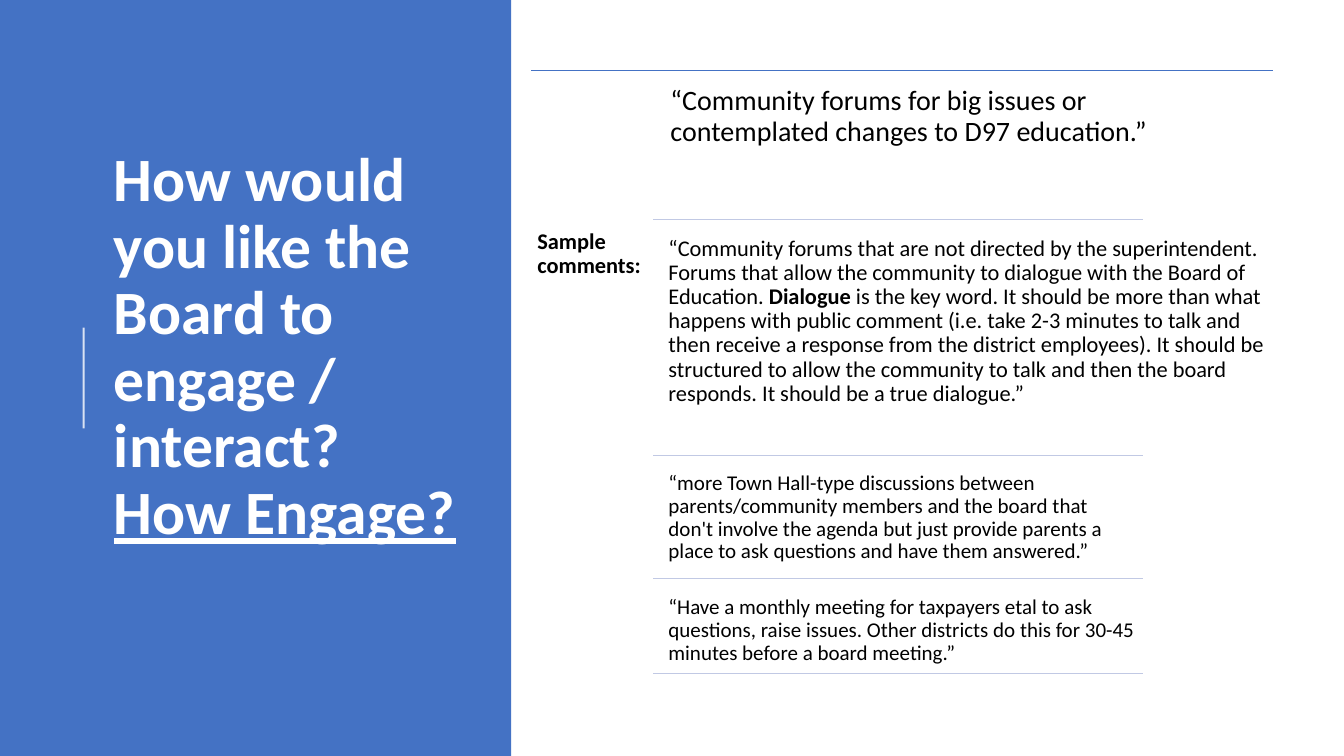
from dataclasses import dataclass

from lxml.etree import SubElement
from pptx import Presentation
from pptx.dml.color import RGBColor as Color
from pptx.enum.shapes import MSO_CONNECTOR as Connector, MSO_SHAPE as Preset
from pptx.enum.text import MSO_ANCHOR as Anchor, MSO_AUTO_SIZE as AutoSize, PP_ALIGN as Align
from pptx.oxml.ns import qn
from pptx.util import Emu, Pt

EMU_PER_PX = 9144  # 100 px to the inch
TITLE_ONLY = 5


@dataclass(frozen=True)
class Theme:
    font: str = "Calibri"
    accent: str = "4472C4"
    divider: str = "C1C9E4"
    white: str = "FFFFFF"
    text: str = "000000"
    title_size: int = 44
    lead_size: int = 20
    body_size: int = 16
    small_size: int = 15
    line_spacing: float = 0.9


def px(*lengths):
    return [Emu(length * EMU_PER_PX) for length in lengths]


def set_attributes(target, values):
    for name, value in values.items():
        setattr(target, name, value)


class SlideBuilder:
    def __init__(self, slide, theme):
        self.slide = slide
        self.theme = theme

    def panel(self, box, color):
        """Add a filled rectangle behind the title."""
        shape = self.slide.shapes.add_shape(Preset.RECTANGLE, *px(*box))
        shape.shadow.inherit = False
        shape.fill.solid()
        shape.fill.fore_color.rgb = Color.from_string(color)
        shape.line.fill.background()
        self.slide.shapes.title._element.addprevious(shape._element)

    def line(self, start, end, color, width=1, opacity=100):
        connector = self.slide.shapes.add_connector(Connector.STRAIGHT, *px(*start, *end))
        connector.line.width = Pt(width)
        connector.line.color.rgb = Color.from_string(color)
        properties = connector._element.spPr
        if opacity < 100:
            fill = next(properties.iter(qn("a:srgbClr")))
            SubElement(fill, qn("a:alpha")).set("val", str(opacity * 1000))
        SubElement(properties, qn("a:effectLst"))

    def title(self, box, lines, bottom_inset):
        """Fill the title placeholder with (text, format) lines."""
        shape = self.slide.shapes.title
        set_attributes(shape, dict(zip(("left", "top", "width", "height"), px(*box))))
        set_attributes(shape.text_frame, {
            "word_wrap": True,
            "auto_size": AutoSize.NONE,
            "vertical_anchor": Anchor.MIDDLE,
            "margin_bottom": px(bottom_inset)[0],
        })
        paragraph = self.paragraph(shape.text_frame)
        for index, (text, style) in enumerate(lines):
            if index:
                paragraph.add_line_break()
            self.run(paragraph, text, self.theme.title_size, self.theme.white, bold=True, **style)

    def text(self, box, runs, size, inset=6):
        """Add a text box holding one paragraph of (text, format) runs."""
        frame = self.slide.shapes.add_textbox(*px(*box)).text_frame
        margin = px(inset)[0]
        set_attributes(frame, {
            "word_wrap": True,
            "margin_left": margin,
            "margin_right": margin,
            "margin_top": margin,
            "margin_bottom": margin,
        })
        paragraph = self.paragraph(frame)
        for text, style in runs:
            self.run(paragraph, text, size, self.theme.text, **style)

    def paragraph(self, frame):
        paragraph = frame.paragraphs[0]
        set_attributes(paragraph, {
            "alignment": Align.LEFT,
            "line_spacing": self.theme.line_spacing,
        })
        return paragraph

    def run(self, paragraph, text, size, color, **style):
        run = paragraph.add_run()
        run.text = text
        set_attributes(run.font, {"name": self.theme.font, "size": Pt(size), **style})
        run.font.color.rgb = Color.from_string(color)


def main():
    theme = Theme()
    presentation = Presentation()
    presentation.slide_width, presentation.slide_height = px(1333, 750)
    slide = presentation.slides.add_slide(presentation.slide_layouts[TITLE_ONLY])
    builder = SlideBuilder(slide, theme)

    builder.panel((0, 0, 507, 750), theme.accent)
    builder.line((83, 425), (83, 325), theme.white, width=1.5, opacity=80)
    builder.title((103, 78, 369, 602), [
        ("How would you like the Board to engage / interact? ", {}),
        ("How Engage?", {"underline": True}),
    ], bottom_inset=72)

    builder.line((527, 70), (1263, 70), theme.accent)
    builder.text((527, 222, 122, 457), [("Sample comments:", {"bold": True})], theme.body_size)

    # Each comment: top, width, height, inset, type size, runs, divider below
    comments = [
        (78, 512, 136, 8, theme.lead_size, [
            ("“Community forums for big issues or contemplated changes to D97 education.”", {}),
        ], 218),
        (229, 605, 223, 6, theme.body_size, [
            ("“Community forums that are not directed by the superintendent. Forums that allow "
             "the community to dialogue with the Board of Education. ", {}),
            ("Dialogue ", {"bold": True}),
            ("is the key word. It should be more than what happens with public comment (i.e. "
             "take 2-3 minutes to talk and then receive a response from the district employees). "
             "It should be structured to allow the community to talk and then the board responds. "
             "It should be a true dialogue.”", {}),
        ], 452),
        (463, 477, 111, 6, theme.small_size, [
            ("“more Town Hall-type discussions between parents/community members and the board "
             "that don't involve the agenda but just provide parents a place to ask questions "
             "and have them answered.”", {}),
        ], 574),
        (586, 477, 83, 6, theme.small_size, [
            ("“Have a monthly meeting for taxpayers etal to ask questions, raise issues. Other "
             "districts do this for 30-45 minutes before a board meeting.”", {}),
        ], 668),
    ]
    for top, width, height, inset, size, runs, divider in comments:
        builder.text((657, top, width, height), runs, size, inset)
        builder.line((648, divider), (1134, divider), theme.divider)

    presentation.save("out.pptx")


if __name__ == "__main__":
    main()
